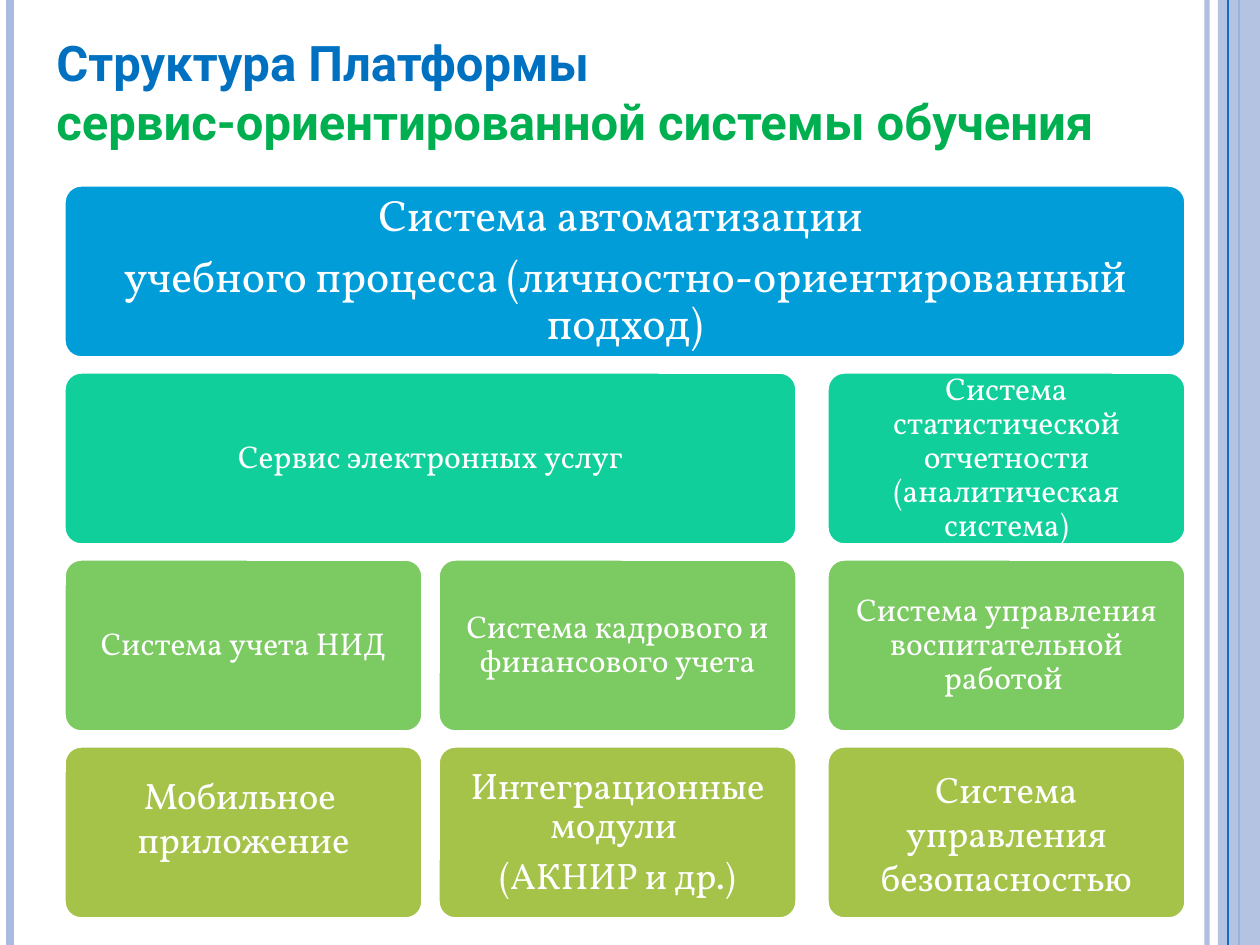
from dataclasses import dataclass

from lxml.etree import SubElement
from pptx import Presentation
from pptx.dml.color import RGBColor
from pptx.enum.shapes import MSO_CONNECTOR, MSO_SHAPE
from pptx.enum.text import MSO_ANCHOR, PP_ALIGN
from pptx.oxml.ns import qn
from pptx.util import Emu, Pt

EMU_PER_PX = 914400 / 126
SLIDE_WIDTH, SLIDE_HEIGHT = 1260, 945

COLORS = {
    "white": "FFFFFF",
    "stripe": "ABBBDF",
    "thin_line": "0F6FC6",
    "title": "0070C0",
    "subtitle": "00B050",
    "blue": "009DD9",
    "teal": "10CF9B",
    "green": "7CCA62",
    "olive": "A5C249",
}

COLUMN_LEFTS = (64, 438, 827)
CARD_WIDTH, CARD_HEIGHT = 359, 173
FIRST_ROW_TOP, ROW_PITCH = 185, 187
ROW_COLORS = ("blue", "teal", "green", "olive")


@dataclass(frozen=True)
class Stripe:
    x: int
    color: str
    weight: float
    opacity: int = 100


@dataclass(frozen=True)
class Card:
    row: int
    column: int
    lines: tuple[str, ...]
    size: int = 18
    span: int = 1
    compact: bool = True
    lift: int = 0


LEFT_STRIPES = (
    Stripe(1207, "stripe", 3, 93),
    Stripe(10, "stripe", 4.5),
    Stripe(1239, "thin_line", 1.5),
)
TOP_STRIPE = Stripe(1228, "thin_line", 0.75)

CARDS = (
    Card(0, 0, ("Система автоматизации ",
                "учебного процесса (личностно-ориентированный подход)"), size=25, span=3),
    Card(1, 0, ("Сервис электронных услуг",), span=2),
    Card(2, 0, ("Система учета НИД",)),
    Card(3, 0, ("Мобильное ", "приложение"), size=21, compact=False, lift=32),
    Card(2, 1, ("Система кадрового и финансового учета",)),
    Card(3, 1, ("Интеграционные модули ", "(АКНИР и др.)"), size=21),
    Card(1, 2, ("Система статистической отчетности (аналитическая система)",)),
    Card(2, 2, ("Система управления воспитательной работой ",)),
    Card(3, 2, ("Система управления безопасностью",), size=21, compact=False),
)


def px(value: int) -> Emu:
    return Emu(round(value * EMU_PER_PX))


def rgb(name: str) -> RGBColor:
    return RGBColor.from_string(COLORS[name])


def set_opacity(properties, percent: int) -> None:
    """Add an alpha value to the first solid colour in the shape properties."""
    color = properties.find(f".//{qn('a:srgbClr')}")
    SubElement(color, qn("a:alpha")).set("val", str(percent * 1000))


def write_paragraph(paragraph, text: str, *, font: str, size: int, color: str,
                    bold: bool = False, align=PP_ALIGN.LEFT,
                    line_spacing: float = 1.0, space_after: float = 0) -> None:
    paragraph.alignment = align
    paragraph.line_spacing = line_spacing
    paragraph.space_after = Pt(space_after)
    run = paragraph.add_run()
    run.text = text
    run.font.name = font
    run.font.size = Pt(size)
    run.font.bold = bold
    run.font.color.rgb = rgb(color)


def paragraph_at(frame, index: int):
    return frame.paragraphs[0] if index == 0 else frame.add_paragraph()


def draw_stripe(slide, stripe: Stripe) -> None:
    line = slide.shapes.add_connector(
        MSO_CONNECTOR.STRAIGHT, px(stripe.x), 0, px(stripe.x), px(SLIDE_HEIGHT))
    line.line.color.rgb = rgb(stripe.color)
    line.line.width = Pt(stripe.weight)
    properties = line._element.spPr
    if stripe.opacity < 100:
        set_opacity(properties, stripe.opacity)
    SubElement(properties, qn("a:effectLst"))


def draw_side_band(slide) -> None:
    left = 1218
    band = slide.shapes.add_shape(
        MSO_SHAPE.RECTANGLE, px(left), 0, px(SLIDE_WIDTH - left), px(SLIDE_HEIGHT))
    band.shadow.inherit = False
    band.fill.solid()
    band.fill.fore_color.rgb = rgb("stripe")
    set_opacity(band._element.spPr, 87)
    band.line.fill.background()


def draw_card(slide, card: Card) -> None:
    left = COLUMN_LEFTS[card.column]
    right = COLUMN_LEFTS[card.column + card.span - 1] + CARD_WIDTH
    shape = slide.shapes.add_shape(
        MSO_SHAPE.ROUNDED_RECTANGLE, px(left), px(FIRST_ROW_TOP + card.row * ROW_PITCH),
        px(right - left), px(CARD_HEIGHT))
    shape.adjustments[0] = 0.1
    shape.shadow.inherit = False
    shape.fill.solid()
    shape.fill.fore_color.rgb = rgb(ROW_COLORS[card.row])
    shape.line.color.rgb = rgb("white")
    shape.line.width = Pt(2)

    frame = shape.text_frame
    frame.word_wrap = True
    frame.vertical_anchor = MSO_ANCHOR.MIDDLE
    inset = card.size // 2
    frame.margin_left = frame.margin_right = frame.margin_top = px(inset)
    frame.margin_bottom = px(inset + card.lift)
    for index, text in enumerate(card.lines):
        is_last = index == len(card.lines) - 1
        write_paragraph(
            paragraph_at(frame, index), text, font="Vollkorn", size=card.size,
            color="white", align=PP_ALIGN.CENTER,
            line_spacing=0.9 if card.compact else 1.0,
            space_after=0.3 * card.size if card.compact and not is_last else 0)


def draw_title(slide) -> None:
    box = slide.shapes.add_textbox(px(44), px(26), px(1191), px(131))
    frame = box.text_frame
    frame.word_wrap = True
    lines = (("Структура Платформы", "title"),
             ("сервис-ориентированной системы обучения", "subtitle"))
    for index, (text, color) in enumerate(lines):
        write_paragraph(paragraph_at(frame, index), text,
                        font="Roboto", size=28, color=color, bold=True)


def main() -> None:
    presentation = Presentation()
    presentation.slide_width = px(SLIDE_WIDTH)
    presentation.slide_height = px(SLIDE_HEIGHT)
    slide = presentation.slides.add_slide(presentation.slide_layouts[6])
    for stripe in LEFT_STRIPES:
        draw_stripe(slide, stripe)
    draw_side_band(slide)
    draw_stripe(slide, TOP_STRIPE)
    for card in CARDS:
        draw_card(slide, card)
    draw_title(slide)
    presentation.save("out.pptx")


if __name__ == "__main__":
    main()
